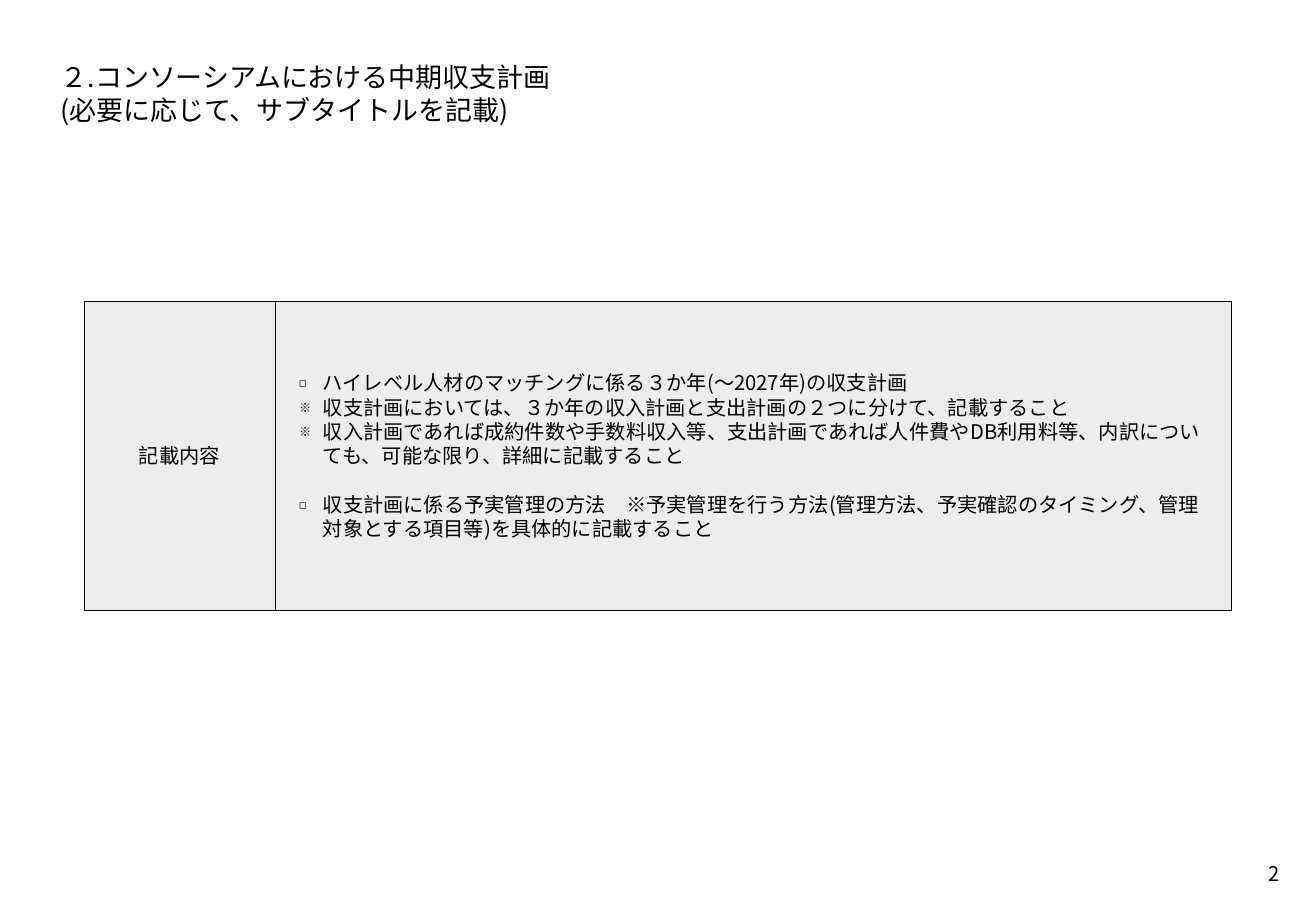
from lxml import etree
from pptx import Presentation
from pptx.dml.color import RGBColor as Rgb
from pptx.enum.dml import MSO_LINE as Dash
from pptx.enum.shapes import MSO_SHAPE as Shape
from pptx.enum.text import MSO_ANCHOR as Anchor, MSO_AUTO_SIZE as Fit, PP_ALIGN as Align
from pptx.oxml.ns import qn
from pptx.util import Pt

FONT = "Noto Sans CJK JP"
COLORS = {"ink": "000000", "panel": "EDEDED"}
PITCH = 1.2
TITLE = "２.コンソーシアムにおける中期収支計画\v(必要に応じて、サブタイトルを記載)"
LABEL = "記載内容"
ITEMS = [
    ("◻", "ハイレベル人材のマッチングに係る３か年(～2027年)の収支計画", 0),
    ("※", "収支計画においては、３か年の収入計画と支出計画の２つに分けて、記載すること", 0),
    ("※", "収入計画であれば成約件数や手数料収入等、支出計画であれば人件費やDB利用料等、"
          "内訳についても、可能な限り、詳細に記載すること", 0),
    ("◻", "収支計画に係る予実管理の方法　※予実管理を行う方法(管理方法、予実確認のタイミング、"
          "管理対象とする項目等)を具体的に記載すること", 12 * PITCH),
]


def set_bullet(par, mark, indent=14):
    props = par._p.get_or_add_pPr()
    props.set("marL", str(Pt(indent)))
    props.set("indent", str(-Pt(indent)))
    etree.SubElement(props, qn("a:buSzPct")).set("val", "60000")
    etree.SubElement(props, qn("a:buFont")).set("typeface", FONT)
    etree.SubElement(props, qn("a:buChar")).set("char", mark)


def put_text(par, text, size=12, align=Align.LEFT, before=0, bullet=None):
    par.text = text
    par.alignment = align
    par.line_spacing = Pt(size * PITCH)
    par.space_before = Pt(before)
    if bullet:
        set_bullet(par, bullet)
    for run in par.runs:
        font = run.font
        font.name, font.size = FONT, Pt(size)
        font.color.rgb = Rgb.from_string(COLORS["ink"])
        etree.SubElement(font._element, qn("a:ea")).set("typeface", FONT)


def set_frame(frame, inset, anchor=Anchor.TOP, wrap=True):
    frame.auto_size = Fit.NONE
    frame.word_wrap = wrap
    frame.vertical_anchor = anchor
    frame.margin_left = frame.margin_right = Pt(inset)
    frame.margin_top = frame.margin_bottom = Pt(inset)


def add_title(slide):
    title = slide.shapes.title
    title.left, title.top = Pt(21.6), Pt(21.6)
    title.width, title.height = Pt(737.3), Pt(56.9)
    set_frame(title.text_frame, 14.4)
    put_text(title.text_frame.paragraphs[0], TITLE, size=16)


def add_panel(slide, left, width, inset):
    box = slide.shapes.add_shape(Shape.RECTANGLE, Pt(left), Pt(178.6), Pt(width), Pt(182.9))
    box.shadow.inherit = False
    box.fill.solid()
    box.fill.fore_color.rgb = Rgb.from_string(COLORS["panel"])
    box.line.color.rgb = Rgb.from_string(COLORS["ink"])
    box.line.width = Pt(0.25)
    box.line.dash_style = Dash.ROUND_DOT
    set_frame(box.text_frame, inset, Anchor.MIDDLE)
    return box.text_frame


def add_items(frame):
    for i, (mark, text, gap) in enumerate(ITEMS):
        par = frame.add_paragraph() if i else frame.paragraphs[0]
        put_text(par, text, before=gap, bullet=mark)


def add_number(slide):
    box = slide.shapes.add_textbox(Pt(737.3), Pt(503.3), Pt(28.1), Pt(28.1))
    set_frame(box.text_frame, 7.2, wrap=False)
    put_text(box.text_frame.paragraphs[0], "2", align=Align.RIGHT)


def main():
    deck = Presentation()
    deck.slide_width, deck.slide_height = Pt(779.76), Pt(540)
    slide = deck.slides.add_slide(deck.slide_layouts[5])
    add_title(slide)
    add_number(slide)
    add_items(add_panel(slide, 162.9, 566.7, 14.4))
    label = add_panel(slide, 49.8, 113.1, 7.2)
    put_text(label.paragraphs[0], LABEL, align=Align.CENTER)
    deck.save("out.pptx")


if __name__ == "__main__":
    main()
